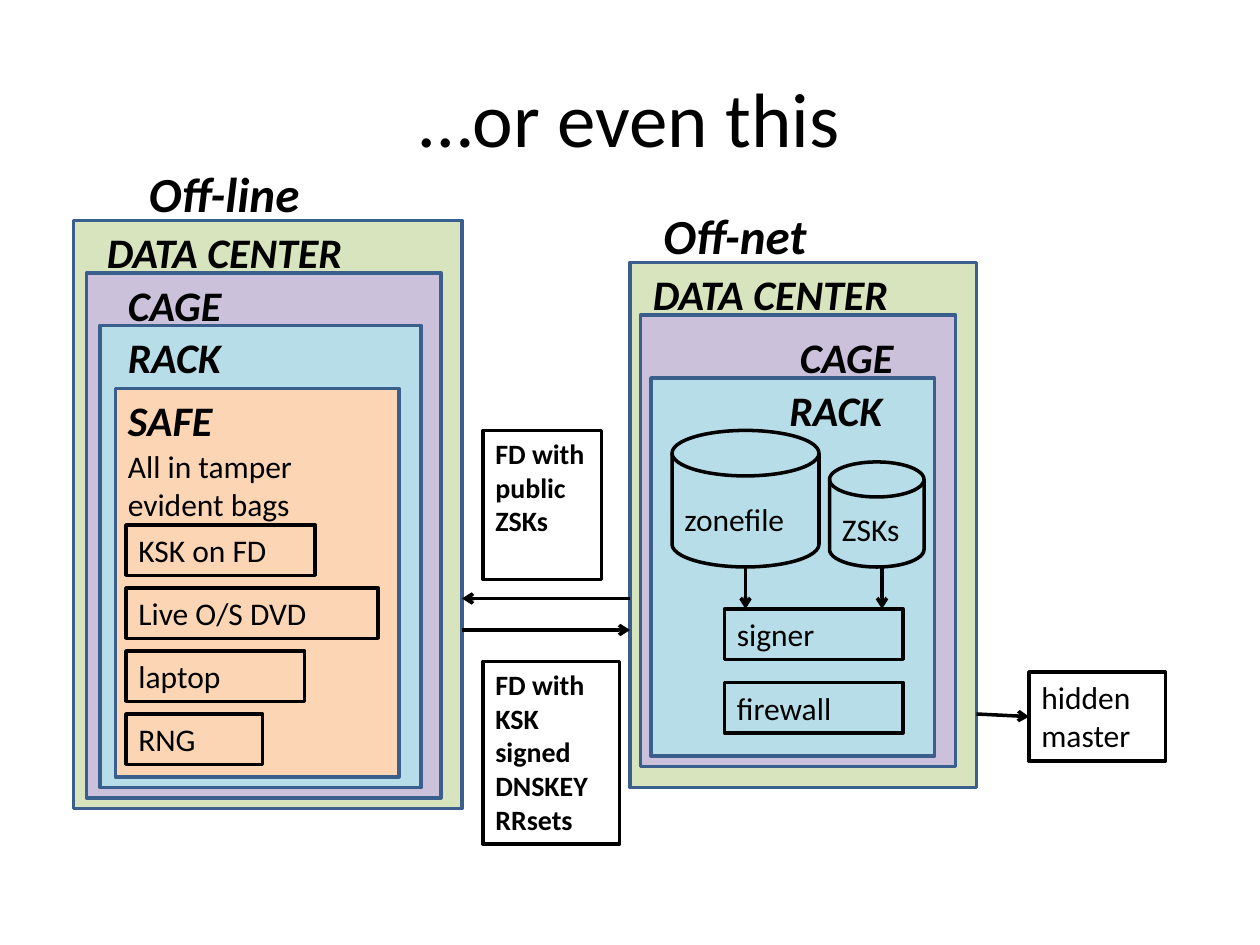
from lxml import etree
from pptx import Presentation
from pptx import util as u
from pptx.dml.color import RGBColor
from pptx.enum import shapes, text
from pptx.oxml.ns import qn

BLACK = RGBColor(0x00, 0x00, 0x00)
BLUE = RGBColor(0x3A, 0x5F, 0x8C)
GREEN = RGBColor(0xD7, 0xE4, 0xBD)
PURPLE = RGBColor(0xCC, 0xC1, 0xDA)
AQUA = RGBColor(0xB7, 0xDE, 0xE8)
PEACH = RGBColor(0xFC, 0xD5, 0xB5)
RECT = shapes.MSO_SHAPE.RECTANGLE
DISK = shapes.MSO_SHAPE.FLOWCHART_MAGNETIC_DISK


class Deck:
    """Slide on a grid of 120 columns by 90 rows."""
    font = "Calibri"
    cell = u.Inches(1) / 12
    stroke = u.Pt(2)

    def __init__(self):
        self.prs = Presentation()
        self.prs.slide_width = u.Inches(10)
        self.prs.slide_height = u.Inches(7.5)
        self.slide = self.prs.slides.add_slide(self.prs.slide_layouts[5])

    def grid(self, *cells):
        return [u.Emu(round(c * self.cell)) for c in cells]

    def letter(self, shape, words, size=18, bold=False, italic=False,
               align=text.PP_ALIGN.LEFT, anchor=text.MSO_ANCHOR.TOP):
        frame = shape.text_frame
        frame.text = words
        frame.word_wrap = True
        frame.auto_size = text.MSO_AUTO_SIZE.NONE
        frame.vertical_anchor = anchor
        for par in frame.paragraphs:
            par.alignment = align
            for run in par.runs:
                font = run.font
                font.name, font.size = self.font, u.Pt(size)
                font.bold, font.italic = bold, italic
                font.color.rgb = BLACK

    def title(self, words):
        shape = self.slide.shapes.title
        shape.left, shape.top, shape.width, shape.height = self.grid(
            6, 3.6, 108, 15)
        self.letter(shape, words, 44, align=text.PP_ALIGN.CENTER,
                    anchor=text.MSO_ANCHOR.MIDDLE)

    def box(self, place, words="", fill=None, line=BLACK, kind=RECT, **style):
        shape = self.slide.shapes.add_shape(kind, *self.grid(*place))
        shape.shadow.inherit = False
        if fill is None:
            shape.fill.background()
        else:
            shape.fill.solid()
            shape.fill.fore_color.rgb = fill
        shape.line.color.rgb = line
        shape.line.width = self.stroke
        if words:
            self.letter(shape, words, **style)

    def label(self, place, words, **style):
        self.letter(self.slide.shapes.add_textbox(*self.grid(*place)),
                    words, **style)

    def head(self, place, words, size=24):
        self.label(place, words, size=size, bold=True, italic=True)

    def arrow(self, *ends):
        link = self.slide.shapes.add_connector(
            shapes.MSO_CONNECTOR.STRAIGHT, *self.grid(*ends))
        link.line.color.rgb = BLACK
        link.line.width = self.stroke
        props = link.element.spPr
        tip = etree.SubElement(props.find(qn("a:ln")), qn("a:tailEnd"))
        tip.set("type", "arrow")
        etree.SubElement(props, qn("a:effectLst"))


def main():
    deck = Deck()
    deck.title("…or even this")

    # Nested zones, off-line then off-net
    zones = [
        ((7, 21, 37, 56), GREEN), ((8.25, 26, 33.75, 50), PURPLE),
        ((9.5, 31, 30.6, 44), AQUA), ((11, 37, 27, 37), PEACH),
        ((60, 25, 33, 50), GREEN), ((61, 30, 30, 43), PURPLE),
        ((62, 36, 27, 36), AQUA),
    ]
    for place, fill in zones:
        deck.box(place, fill=fill, line=BLUE)

    # Zone headings
    for x, y, wide, words in [
        (9, 21, 36, "DATA CENTER"), (11, 26, 19, "CAGE"),
        (11, 31, 19, "RACK"), (11, 37, 19, "SAFE"),
        (61, 25, 36, "DATA CENTER"), (75, 31, 19, "CAGE"),
        (74, 36, 14, "RACK"),
    ]:
        deck.head((x, y, wide, 6), words)
    deck.head((13, 15, 29, 6.8), "Off-line", 28)
    deck.head((62, 19, 29, 6.8), "Off-net", 28)

    # Contents of the safe
    deck.label((11, 42, 25, 8.5), "All in tamper evident bags")
    items = [("KSK on FD", 18), ("Live O/S DVD", 24), ("laptop", 17), ("RNG", 13)]
    for i, (words, wide) in enumerate(items):
        deck.box((12, 50 + 6 * i, wide, 4.8), words)

    # Stores feeding the signer
    for place, tag, words in [
        ((64, 41, 14, 13), (64, 47, 17, 4.8), "zonefile"),
        ((79, 44, 9, 10), (79, 48, 10, 4.8), "ZSKs"),
    ]:
        deck.box(place, kind=DISK)
        deck.label(tag, words)
    for x in (71, 84):
        deck.arrow(x, 54, x, 58)
    for y, words in [(58, "signer"), (65, "firewall")]:
        deck.box((69, y, 17, 4.8), words)

    # Exchange between the sites
    deck.arrow(60, 57, 44, 57)
    deck.arrow(44, 60, 60, 60)
    deck.box((46, 41, 11.3, 14.2), "FD with public ZSKs", size=16, bold=True)
    deck.box((46, 63, 13, 17.4), "FD with KSK signed DNSKEY RRsets",
             size=16, bold=True)

    # Output
    deck.box((98, 64, 13, 8.5), "hidden master")
    deck.arrow(93, 68, 98, 68.25)

    deck.prs.save("out.pptx")


if __name__ == "__main__":
    main()
